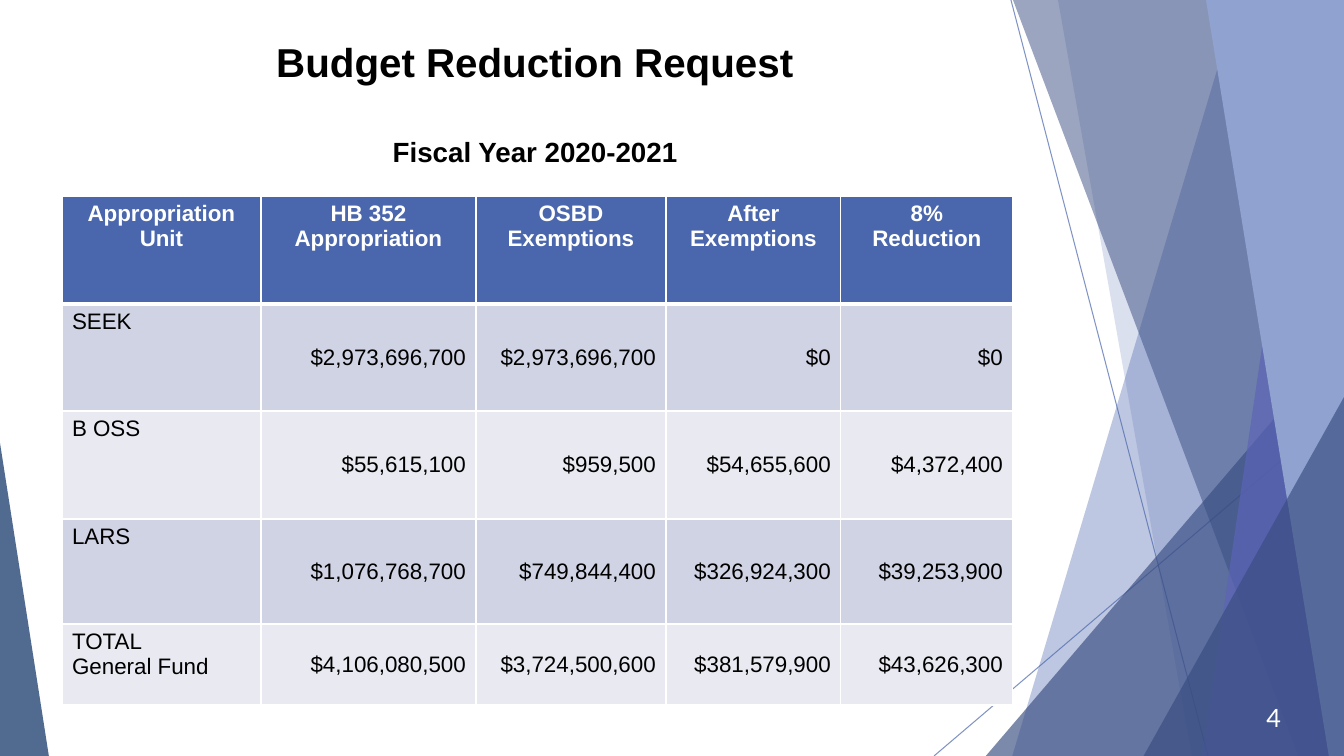
from lxml.etree import SubElement
from pptx import Presentation
from pptx.dml.color import RGBColor
from pptx.enum.shapes import MSO_CONNECTOR, MSO_SHAPE
from pptx.enum.text import MSO_ANCHOR, PP_ALIGN
from pptx.oxml.ns import qn
from pptx.util import Emu, Pt

SCALE = 914400 / 100.8
W, H = 1344, 757

COLORS = {
    "blue": "4A66AC",
    "navy": "384C81",
    "violet": "5C64B7",
    "sky": "90A2CF",
    "deep": "072C62",
    "band_dark": "D0D3E3",
    "band_light": "E9EAF1",
    "white": "FFFFFF",
    "black": "000000",
}

RAYS = [((934, 756), (1344, 407)), ((1011, 0), (1208, 756))]
BACK_PANELS = [
    ([(1238, 0), (W, 0), (W, H), (1012, H)], "blue", 36),
    ([(1058, 0), (W, 0), (W, H), (1192, H)], "blue", 20),
]
FRONT_PANELS = [
    ([(1013, 0), (W, 0), (W, H), (1299, H)], "navy", 50),
    ([(1313, 0), (W, 0), (W, H), (1202, H)], "violet", 70),
    ([(1206, 0), (W, 0), (W, H), (1329, H)], "sky", 100),
]

COL_WIDTHS = [199, 215, 190, 175, 172]
ROW_HEIGHTS = [108, 107, 108, 105, 81]
BUDGET = [
    ["Appropriation\nUnit", "HB 352\nAppropriation", "OSBD\nExemptions",
     "After\nExemptions", "8%\nReduction"],
    ["SEEK", "$2,973,696,700", "$2,973,696,700", "$0", "$0"],
    ["B OSS", "$55,615,100", "$959,500", "$54,655,600", "$4,372,400"],
    ["LARS", "$1,076,768,700", "$749,844,400", "$326,924,300", "$39,253,900"],
    ["TOTAL\nGeneral Fund", "$4,106,080,500", "$3,724,500,600",
     "$381,579,900", "$43,626,300"],
]


def px(*values):
    """Turn pixel lengths into a list of EMU lengths."""
    return [Emu(round(v * SCALE)) for v in values]


def rgb(name):
    """Look up a named colour."""
    return RGBColor.from_string(COLORS[name])


def set_alpha(sp, percent):
    """Make every colour of a shape's fill and line translucent."""
    for clr in sp._element.spPr.iter(qn("a:srgbClr")):
        SubElement(clr, qn("a:alpha"), val=str(percent * 1000))


def paint(sp, color, alpha):
    """Give a shape a plain translucent fill without line or shadow."""
    sp.shadow.inherit = False
    sp.fill.solid()
    sp.fill.fore_color.rgb = rgb(color)
    sp.line.fill.background()
    set_alpha(sp, alpha)


def add_panel(slide, points, color, alpha):
    """Draw a closed polygon."""
    builder = slide.shapes.build_freeform(*points[0], scale=SCALE)
    builder.add_line_segments(points[1:], close=True)
    paint(builder.convert_to_shape(), color, alpha)


def add_triangle(slide, box, apex, color, alpha):
    """Draw a right-angled triangle with its apex at 0 (left) or 1 (right)."""
    sp = slide.shapes.add_shape(MSO_SHAPE.ISOSCELES_TRIANGLE, *px(*box))
    sp.adjustments[0] = apex
    paint(sp, color, alpha)


def add_ray(slide, start, end):
    """Draw a thin translucent line."""
    line = slide.shapes.add_connector(MSO_CONNECTOR.STRAIGHT, *px(*start, *end))
    line.line.color.rgb = rgb("blue")
    line.line.width = Pt(0.75)
    set_alpha(line, 70)
    SubElement(line._element.spPr, qn("a:effectLst"))


def write(p, text, size=16, color="black", bold=False, align=PP_ALIGN.LEFT,
          font="Arial", before=0):
    """Fill a paragraph with one formatted run."""
    p.alignment = align
    if before:
        p.space_before = Pt(before)
    r = p.add_run()
    r.text = text
    r.font.name = font
    r.font.size = Pt(size)
    r.font.bold = bold
    r.font.color.rgb = rgb(color)


def add_title(slide):
    """Place the title and its fiscal-year line."""
    sp = slide.shapes.title
    sp.left, sp.top, sp.width, sp.height = px(61, 32, 948, 145)
    tf = sp.text_frame
    tf.vertical_anchor = MSO_ANCHOR.TOP
    style = {"bold": True, "align": PP_ALIGN.CENTER}
    write(tf.paragraphs[0], "Budget Reduction Request", size=28.8, **style)
    write(tf.add_paragraph(), "Fiscal Year 2020-2021", size=19.8, before=35,
          **style)


def add_borders(cell, **widths):
    """Add white cell borders, given in points by side."""
    for side in ("L", "R", "T", "B"):
        ln = SubElement(cell._tc.get_or_add_tcPr(), qn(f"a:ln{side}"),
                        w=str(Pt(widths.get(side, 1))))
        fill = SubElement(ln, qn("a:solidFill"))
        SubElement(fill, qn("a:srgbClr"), val=COLORS["white"])


def fill_cell(cell, text, fill, borders, anchor, **style):
    """Write the lines of a cell and set its look."""
    add_borders(cell, **borders)
    cell.fill.solid()
    cell.fill.fore_color.rgb = rgb(fill)
    cell.vertical_anchor = anchor
    tf = cell.text_frame
    for i, line in enumerate(text.split("\n")):
        write(tf.add_paragraph() if i else tf.paragraphs[0], line, **style)


def add_budget_table(slide):
    """Build the table of appropriations and reductions."""
    box = px(62, 196, sum(COL_WIDTHS), sum(ROW_HEIGHTS))
    table = slide.shapes.add_table(len(BUDGET), len(COL_WIDTHS), *box).table
    for col, width in zip(table.columns, px(*COL_WIDTHS)):
        col.width = width
    for row, height in zip(table.rows, px(*ROW_HEIGHTS)):
        row.height = height
    for i, row in enumerate(BUDGET):
        for j, text in enumerate(row):
            fill = "band_dark" if i % 2 else "band_light"
            borders = {"T": 3} if i == 1 else {}
            anchor = MSO_ANCHOR.MIDDLE if j else MSO_ANCHOR.TOP
            style = {"align": PP_ALIGN.RIGHT if j else PP_ALIGN.LEFT}
            if i == 0:
                fill, borders, anchor = "blue", {"B": 3}, MSO_ANCHOR.TOP
                style = {"align": PP_ALIGN.CENTER, "color": "white", "bold": True}
            fill_cell(table.cell(i, j), text, fill, borders, anchor, **style)


def add_page_number(slide, text):
    """Put the page number in the lower right corner."""
    tf = slide.shapes.add_textbox(*px(1216, 697, 75, 40)).text_frame
    tf.word_wrap = True
    tf.vertical_anchor = MSO_ANCHOR.MIDDLE
    write(tf.paragraphs[0], text, size=18, color="white", font="Lato",
          align=PP_ALIGN.RIGHT)


def add_facets(slide):
    """Draw the overlapping facets at both edges."""
    for start, end in RAYS:
        add_ray(slide, start, end)
    for panel in BACK_PANELS:
        add_panel(slide, *panel)
    add_triangle(slide, (985, 337, 359, 420), 1, "navy", 66)
    for panel in FRONT_PANELS:
        add_panel(slide, *panel)
    add_triangle(slide, (1143, 397, 201, 360), 1, "navy", 66)
    add_triangle(slide, (0, 443, 49, 314), 0, "deep", 70)


def main():
    """Build the slide and save it."""
    prs = Presentation()
    prs.slide_width, prs.slide_height = px(1344, 756)
    slide = prs.slides.add_slide(prs.slide_layouts[5])
    add_facets(slide)
    add_title(slide)
    add_page_number(slide, "4")
    add_budget_table(slide)
    prs.save("out.pptx")


if __name__ == "__main__":
    main()
